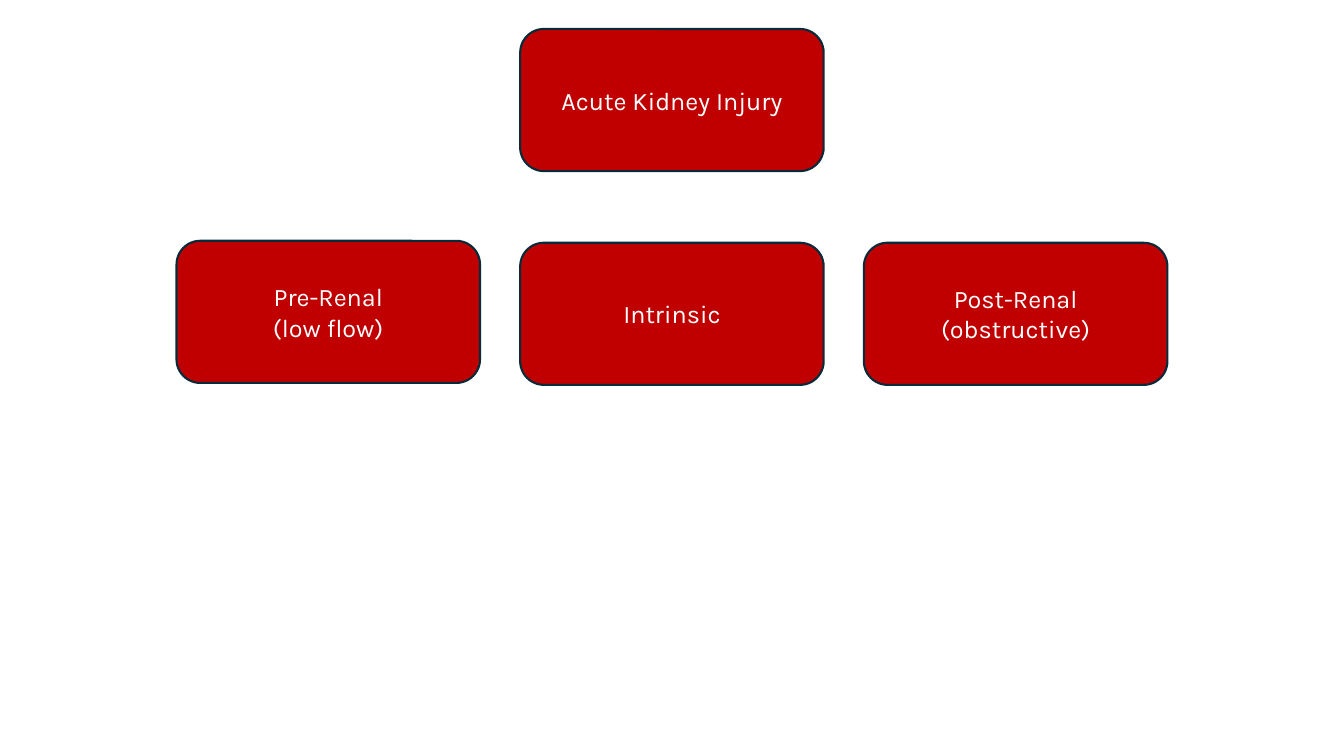
from dataclasses import dataclass

from pptx import Presentation
from pptx import util as u
from pptx.dml.color import RGBColor
from pptx.enum import shapes, text


@dataclass(frozen=True)
class Theme:
    fill: RGBColor = RGBColor(0xC0, 0x00, 0x00)
    outline: RGBColor = RGBColor(0x09, 0x2A, 0x39)
    ink: RGBColor = RGBColor(0xFF, 0xFF, 0xFF)
    font: str = "Karla"
    size: float = 18
    line_width: float = 1.5


class Chart:
    def __init__(self, page, theme):
        self.page = page
        self.theme = theme

    def card(self, left, top, width, height, lines):
        theme = self.theme
        box = self.page.shapes.add_shape(
            shapes.MSO_SHAPE.ROUNDED_RECTANGLE,
            u.Pt(left), u.Pt(top), u.Pt(width), u.Pt(height))
        box.shadow.inherit = False
        box.fill.solid()
        box.fill.fore_color.rgb = theme.fill
        box.line.color.rgb = theme.outline
        box.line.width = u.Pt(theme.line_width)
        frame = box.text_frame
        frame.word_wrap = True
        frame.vertical_anchor = text.MSO_ANCHOR.MIDDLE
        frame.text = "\n".join(lines)
        for para in frame.paragraphs:
            para.alignment = text.PP_ALIGN.CENTER
            para.font.name = theme.font
            para.font.size = u.Pt(theme.size)
            para.font.color.rgb = theme.ink


def main():
    slide_width, slide_height = 960, 540
    card_width, card_height = 216.8, 101.5
    column_pitch = 245.5
    middle_left = (slide_width - card_width) / 2

    deck = Presentation()
    deck.slide_width = u.Pt(slide_width)
    deck.slide_height = u.Pt(slide_height)
    chart = Chart(deck.slides.add_slide(deck.slide_layouts[6]), Theme())

    cards = [
        (0, 20.7, ["Acute Kidney Injury"]),
        (-1, 172, ["Pre-Renal", "(low flow)"]),
        (0, 173.4, ["Intrinsic"]),
        (1, 173.4, ["Post-Renal", "(obstructive)"]),
    ]
    for column, top, lines in cards:
        left = middle_left + column * column_pitch
        chart.card(left, top, card_width, card_height, lines)

    deck.save("out.pptx")


if __name__ == "__main__":
    main()
